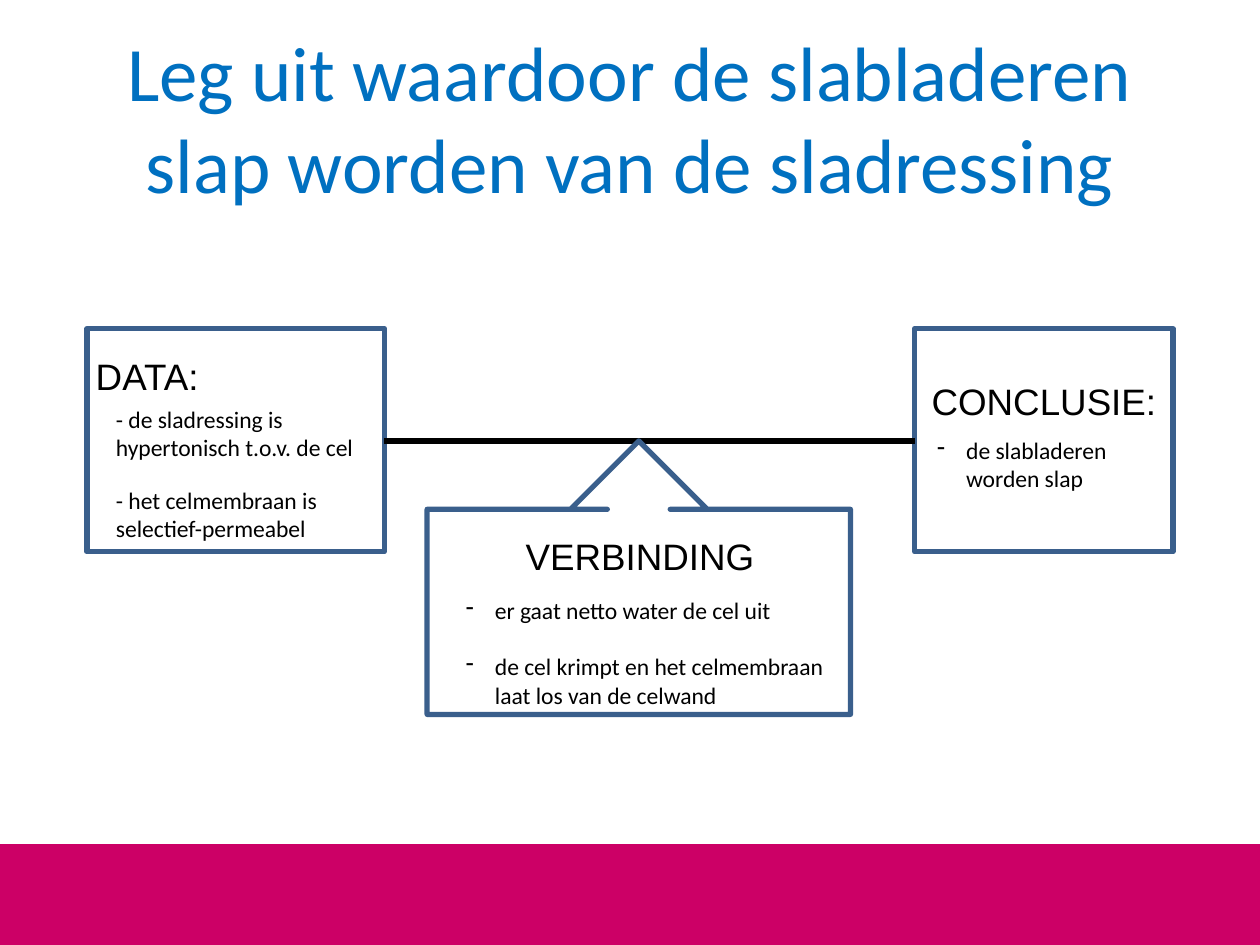
from lxml.etree import SubElement
from pptx import Presentation
from pptx.dml.color import RGBColor
from pptx.enum.shapes import MSO_CONNECTOR, MSO_SHAPE
from pptx.enum.text import MSO_ANCHOR, MSO_AUTO_SIZE, PP_ALIGN
from pptx.oxml.ns import qn
from pptx.util import Inches, Pt

COLORS = {"band": "CC0066", "title": "0070C0", "frame": "3A5F8C", "ink": "000000"}


def color(name):
    """Return a named colour."""
    return RGBColor.from_string(COLORS[name])


def place(shape, box):
    """Move a shape to a box given in inches."""
    shape.left, shape.top, shape.width, shape.height = map(Inches, box)


def write(par, text, size, font="Calibri", ink="ink", align=PP_ALIGN.LEFT):
    """Add one formatted run to a paragraph."""
    par.alignment = align
    run = par.add_run()
    run.text = text
    run.font.size = Pt(size)
    run.font.name = font
    run.font.color.rgb = color(ink)


def add_list(shape, items, gap, bullet=None):
    """Fill a shape with small paragraphs, hanging if they have a bullet."""
    frame = shape.text_frame
    frame.word_wrap = True
    frame.auto_size = MSO_AUTO_SIZE.NONE
    hang = Inches(0.23) if bullet else 0
    for num, item in enumerate(items):
        par = frame.paragraphs[0] if num == 0 else frame.add_paragraph()
        props = par._p.get_or_add_pPr()
        props.set("marL", str(hang))
        props.set("indent", str(-hang))
        if bullet:
            SubElement(props, qn("a:buChar"), char=bullet)
        else:
            SubElement(props, qn("a:buNone"))
        par.space_before = Pt(gap if num else 0)
        par.font.size = Pt(13.5)
        write(par, item, 13.5)


def add_head(shape, text, top, align):
    """Write a heading at a given depth in a shape."""
    frame = shape.text_frame
    frame.word_wrap = True
    frame.vertical_anchor = MSO_ANCHOR.TOP
    frame.margin_left = frame.margin_right = Inches(0.07)
    frame.margin_top = Inches(top)
    frame.margin_bottom = Inches(0.04)
    write(frame.paragraphs[0], text, 21, "Arial", align=align)


def add_frame(slide, kind, box):
    """Add an outlined shape without fill."""
    shape = slide.shapes.add_shape(kind, *map(Inches, box))
    shape.shadow.inherit = False
    shape.fill.background()
    shape.line.color.rgb = color("frame")
    shape.line.width = Pt(3)
    return shape


def add_band(slide, box):
    """Add the coloured band at the foot."""
    band = slide.shapes.add_shape(MSO_SHAPE.RECTANGLE, *map(Inches, box))
    band.shadow.inherit = False
    band.fill.solid()
    band.fill.fore_color.rgb = color("band")
    band.line.fill.background()


def add_title(slide, box):
    """Fill the title placeholder."""
    title = slide.shapes.title
    place(title, box)
    frame = title.text_frame
    frame.auto_size = MSO_AUTO_SIZE.NONE
    frame.vertical_anchor = MSO_ANCHOR.MIDDLE
    text = "Leg uit waardoor de slabladeren slap worden van de sladressing"
    write(frame.paragraphs[0], text, 44, ink="title", align=PP_ALIGN.CENTER)


def add_data(slide, box):
    """Add the data box with its list in the body placeholder."""
    left, top, width, height = box
    body = slide.placeholders[1]
    place(body, (left + 0.13, top + 0.57, width - 0.13, height - 0.57))
    body.text_frame.margin_top = Inches(0.03)
    body.text_frame.margin_bottom = Inches(0.03)
    items = ["- de sladressing is hypertonisch t.o.v. de cel",
             "- het celmembraan is selectief-permeabel"]
    add_list(body, items, 14)
    frame = add_frame(slide, MSO_SHAPE.RECTANGLE, box)
    add_head(frame, "DATA:", 0.2, PP_ALIGN.LEFT)


def add_claim(slide, box):
    """Add the conclusion box and its list."""
    left, top, width, height = box
    frame = add_frame(slide, MSO_SHAPE.RECTANGLE, box)
    add_head(frame, "CONCLUSIE:", 0.4, PP_ALIGN.CENTER)
    area = (left + 0.08, top + 0.8, width - 0.08, 0.86)
    text = slide.shapes.add_textbox(*map(Inches, area))
    add_list(text, ["de slabladeren worden slap"], 0, "-")


def add_link(slide, box):
    """Add the callout that links data and conclusion."""
    left, top, width, height = box
    call = add_frame(slide, MSO_SHAPE.UP_ARROW_CALLOUT, box)
    for num, value in enumerate((0.23, 0.25, 0.25, 0.75)):
        call.adjustments[num] = value
    area = (left + 0.09, top + 0.67, width - 0.16, 0.5)
    head = slide.shapes.add_textbox(*map(Inches, area))
    add_head(head, "VERBINDING", 0.07, PP_ALIGN.CENTER)
    area = (left + 0.21, top + 1.18, width - 0.29, 1.31)
    text = slide.shapes.add_textbox(*map(Inches, area))
    items = ["er gaat netto water de cel uit",
             "de cel krimpt en het celmembraan laat los van de celwand"]
    add_list(text, items, 16, "-")


def add_line(slide, start, end, level):
    """Draw the level line between the outer boxes."""
    ends = map(Inches, (start, level, end, level))
    line = slide.shapes.add_connector(MSO_CONNECTOR.STRAIGHT, *ends)
    line.line.color.rgb = color("ink")
    line.line.width = Pt(3)
    SubElement(line._element.spPr, qn("a:effectLst"))


def main():
    """Build and save the slide."""
    deck = Presentation()
    deck.slide_width, deck.slide_height = Inches(10), Inches(7.5)
    slide = deck.slides.add_slide(deck.slide_layouts[1])
    add_band(slide, (0, 6.7, 10, 0.8))
    add_title(slide, (0.5, 0.3, 9, 1.25))
    add_data(slide, (0.69, 2.61, 2.36, 1.77))
    add_claim(slide, (7.26, 2.61, 2.05, 1.77))
    add_line(slide, 3.05, 7.26, 3.5)
    add_link(slide, (3.39, 3.5, 3.36, 2.17))
    deck.save("out.pptx")


if __name__ == "__main__":
    main()
